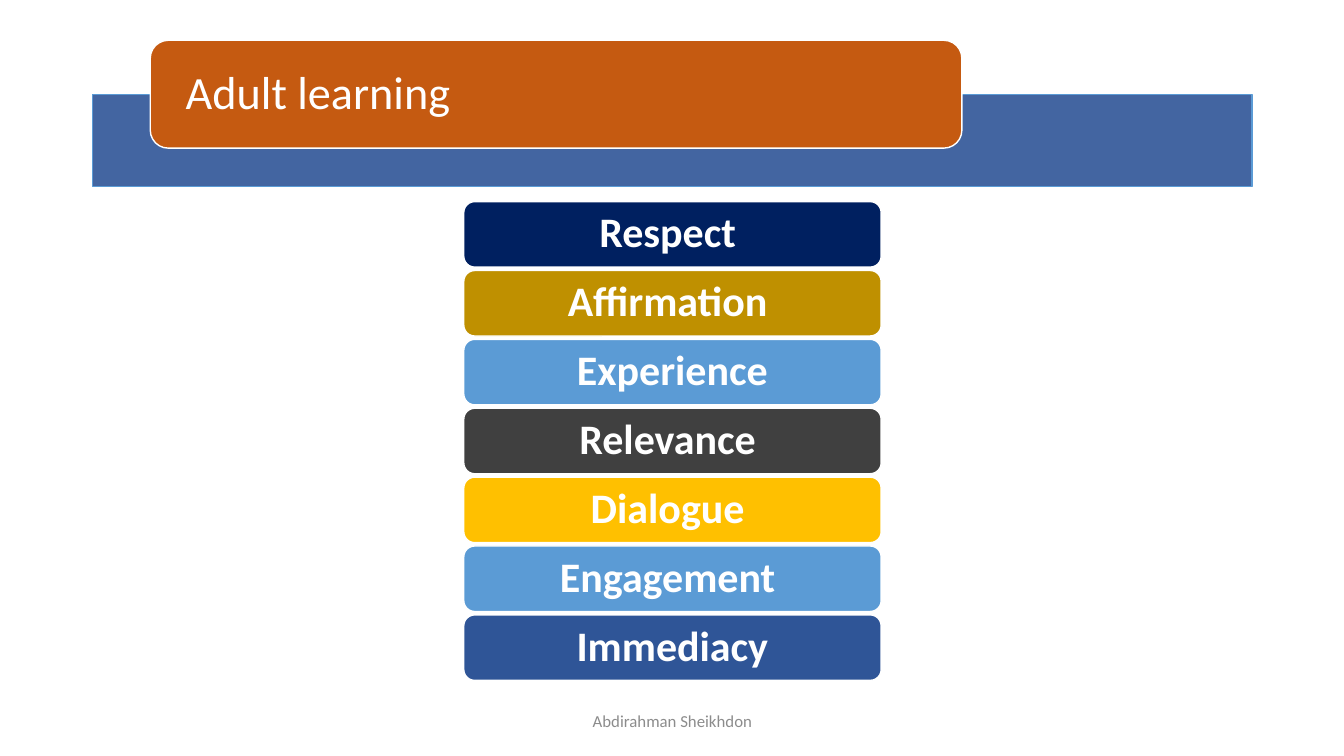
from dataclasses import dataclass

from lxml.etree import SubElement
from pptx import Presentation
from pptx.dml.color import RGBColor
from pptx.enum.shapes import MSO_SHAPE as Shape
from pptx.enum.text import MSO_ANCHOR as Anchor, PP_ALIGN as Align
from pptx.oxml.ns import qn
from pptx.util import Inches, Pt


@dataclass(frozen=True)
class Theme:
    font: str = "Calibri"
    white: str = "FFFFFF"
    grey: str = "8C8C8C"
    orange: str = "C55A11"
    blue: str = "2F5597"
    sky: str = "5B9BD5"
    navy: str = "002060"
    ochre: str = "BF9000"
    charcoal: str = "404040"
    gold: str = "FFC000"
    title_size: int = 33
    label_size: int = 30
    footer_size: int = 12


theme = Theme()


def add_panel(kind, left, top, width, height, fill, line):
    panel = page.shapes.add_shape(
        kind, Inches(left), Inches(top), Inches(width), Inches(height))
    panel.shadow.inherit = False
    panel.fill.solid()
    panel.fill.fore_color.rgb = RGBColor.from_string(fill)
    panel.line.color.rgb = RGBColor.from_string(line)
    panel.line.width = Pt(1)
    return panel


def write_text(box, text, *, size, color=theme.white, bold=False,
               align=Align.CENTER, spacing=0.9, inset=(0.12, 0.06)):
    frame = box.text_frame
    frame.word_wrap = True
    frame.vertical_anchor = Anchor.MIDDLE
    frame.margin_left = frame.margin_right = Inches(inset[0])
    frame.margin_top = frame.margin_bottom = Inches(inset[1])
    para = frame.paragraphs[0]
    para.alignment = align
    para.line_spacing = spacing
    span = para.add_run()
    span.text = text
    span.font.name = theme.font
    span.font.size = Pt(size)
    span.font.bold = bold
    span.font.color.rgb = RGBColor.from_string(color)


deck = Presentation()
deck.slide_width = Inches(13.33)
deck.slide_height = Inches(7.5)
page = deck.slides.add_slide(deck.slide_layouts[6])

# Title band, slightly transparent
band = add_panel(Shape.RECTANGLE, 0.92, 0.94, 11.5, 0.91, theme.blue, theme.sky)
band_color = band.fill._xPr.find(qn("a:solidFill"))[0]
SubElement(band_color, qn("a:alpha"), val="90000")

# Title
title = add_panel(Shape.ROUNDED_RECTANGLE, 1.49, 0.4, 8.05, 1.07,
                  theme.orange, theme.white)
write_text(title, "Adult learning", size=theme.title_size,
           align=Align.LEFT, inset=(0.3, 0))

# Stack of principles
principles = [
    ("Respect ", theme.navy),
    ("Affirmation ", theme.ochre),
    ("Experience", theme.sky),
    ("Relevance ", theme.charcoal),
    ("Dialogue ", theme.gold),
    ("Engagement ", theme.sky),
    ("Immediacy", theme.blue),
]
first_top, last_top = 2, 6.1
pitch = (last_top - first_top) / (len(principles) - 1)
for row, (name, color) in enumerate(principles):
    bar = add_panel(Shape.ROUNDED_RECTANGLE, 4.6, first_top + row * pitch,
                    4.14, 0.65, color, theme.white)
    write_text(bar, name, size=theme.label_size, bold=True)

# Footer
footer = page.shapes.add_textbox(Inches(4.42), Inches(6.95), Inches(4.5), Inches(0.4))
write_text(footer, "Abdirahman Sheikhdon", size=theme.footer_size,
           color=theme.grey, spacing=1.0, inset=(0.1, 0.05))

deck.save("out.pptx")
